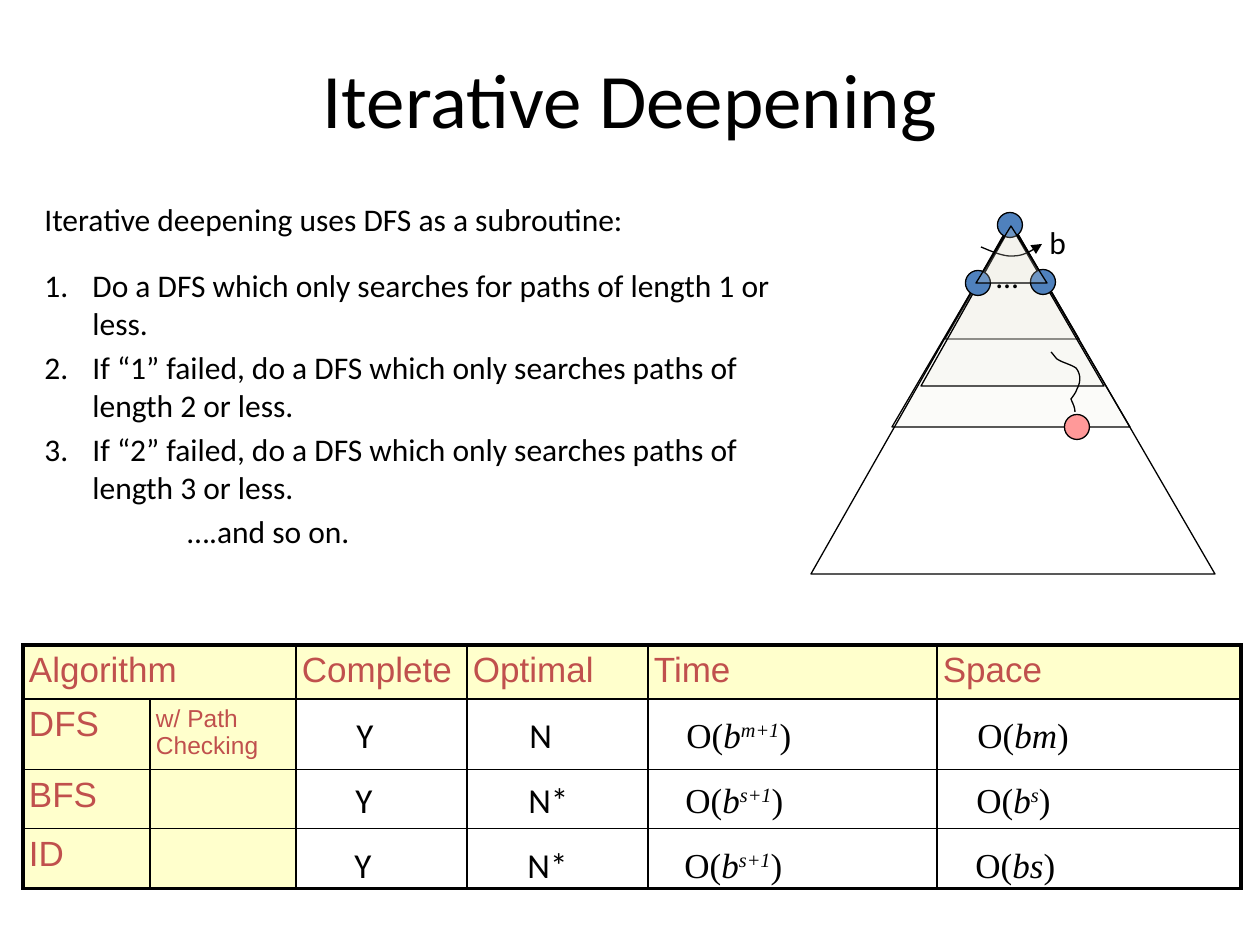
"""Builds the Iterative Deepening slide: steps, search pyramid and comparison table."""
from lxml import etree
from pptx import Presentation
from pptx.dml.color import RGBColor
from pptx.enum.shapes import MSO_SHAPE
from pptx.enum.text import MSO_ANCHOR, PP_ALIGN
from pptx.oxml.ns import qn
from pptx.util import Pt

OVAL = MSO_SHAPE.OVAL
MIDDLE = MSO_ANCHOR.MIDDLE
CENTER = PP_ALIGN.CENTER
EMU_PER_PX = 914400 / 126
COLORS = {"ink": "000000", "label": "C0504D", "label_fill": "FFFFCC",
          "layer": "EEECE1", "node": "4F81BD", "goal": "FF9999"}

TITLE = "Iterative Deepening"
INTRO = "Iterative deepening uses DFS as a subroutine:"
STEPS = ["Do a DFS which only searches for paths of length 1 or less.",
         "If “1” failed, do a DFS which only searches paths of length 2 or less.",
         "If “2” failed, do a DFS which only searches paths of length 3 or less."]
OUTRO = "….and so on."

HEADERS = ["Algorithm", "", "Complete", "Optimal", "Time", "Space"]
ALGORITHMS = [("DFS", "w/ Path Checking"), ("BFS", ""), ("ID", "")]
RESULTS = [("Y", "N", ("b", "m+1"), ("bm", "")),
           ("Y", "N*", ("b", "s+1"), ("b", "s")),
           ("Y", "N*", ("b", "s+1"), ("bs", ""))]
COLUMNS = [127, 146, 171, 181, 289, 304]
ROWS = [51, 68, 59, 60]
RESULT_BOXES = [(344, 84), (517, 84), (674, 262), (965, 189)]
RESULT_TOP, RESULT_PITCH = 707, 65

LAYERS = [[(1012, 224), (945, 339), (1079, 339)],
          [(1011, 224), (892, 427), (1130, 427)],
          [(1011, 226), (921, 386), (1104, 386)]]
FIRST_LAYER = [(1011, 226), (976, 283), (1047, 283)]
WHOLE_TREE = [(811, 574), (1215, 574), (1011, 222)]
NODES = [(1010, 225), (978, 283), (1043, 282)]
GOAL = (1077, 427)
NODE_SIZE = 25
BRANCH_ARC = [(981, 247), (993, 252), (1004, 257), (1014, 256),
              (1024, 256), (1033, 250), (1042, 244)]
PATH_TO_GOAL = [(1051, 352), (1053, 354), (1055, 357), (1057, 359),
                (1063, 363), (1070, 364), (1076, 368),
                (1081, 374), (1081, 382), (1077, 389),
                (1076, 393), (1071, 399), (1071, 399),
                (1073, 404), (1075, 407), (1075, 412)]


def px(n):
    return round(n * EMU_PER_PX)


def rgb(name):
    return RGBColor.from_string(COLORS[name])


def set_font(font, size, face="Calibri", color="ink"):
    font.size, font.name = Pt(size), face
    font.color.rgb = rgb(color)


def style(sp, fill=None, opacity=None):
    sp.shadow.inherit = False
    sp.line.color.rgb = rgb("ink")
    sp.line.width = Pt(0.75)
    if fill is None:
        sp.fill.background()
        return
    sp.fill.solid()
    sp.fill.fore_color.rgb = rgb(fill)
    if opacity:
        color = sp.fill._xPr.find(".//" + qn("a:srgbClr"))
        etree.SubElement(color, qn("a:alpha"), val=str(opacity * 1000))


def outline(s, points, close, fill=None, opacity=None):
    start, *rest = [(px(x), px(y)) for x, y in points]
    builder = s.shapes.build_freeform(*start, scale=1.0)
    builder.add_line_segments(rest, close=close)
    sp = builder.convert_to_shape()
    style(sp, fill, opacity)
    return sp


def bezier(points, steps=10):
    curve = [points[0]]
    for i in range(0, len(points) - 1, 3):
        a, b, c, d = points[i:i + 4]
        for k in range(1, steps + 1):
            t = k / steps
            u = 1 - t
            curve.append(tuple(u**3 * a[j] + 3 * u * u * t * b[j]
                               + 3 * u * t * t * c[j] + t**3 * d[j] for j in (0, 1)))
    return curve


def node(s, center, fill):
    x, y = (v - NODE_SIZE / 2 for v in center)
    style(s.shapes.add_shape(OVAL, px(x), px(y), px(NODE_SIZE), px(NODE_SIZE)), fill)


def text_box(s, x, y, w, h):
    tf = s.shapes.add_textbox(px(x), px(y), px(w), px(h)).text_frame
    tf.word_wrap = True
    return tf


def label(s, text, x, y, w, h, size):
    p = text_box(s, x, y, w, h).paragraphs[0]
    p.text = text
    set_font(p.font, size)


def formula(s, base, exponent, x, y, w, h):
    p = text_box(s, x, y, w, h).paragraphs[0]
    set_font(p.font, 20, "Times New Roman")
    for text, italic, raised in [("O(", False, False), (base, True, False),
                                 (exponent, True, True), (")", False, False)]:
        if text:
            r = p.add_run()
            r.text, r.font.italic = text, italic
            if raised:
                r._r.get_or_add_rPr().set("baseline", "30000")


def add_steps(s):
    tf = text_box(s, 32, 194, 762, 694)
    lines = [(INTRO, 0, 0), *((step, 48, 3.6) for step in STEPS), (OUTRO, 143, 3.6)]
    for i, (text, margin, before) in enumerate(lines):
        p = tf.add_paragraph() if i else tf.paragraphs[0]
        p.text = text
        p.space_before = Pt(16 if i == 1 else before)
        set_font(p.font, 18)
        pPr = p._p.get_or_add_pPr()
        pPr.set("marL", str(px(margin)))
        if text in STEPS:
            pPr.set("indent", str(px(-margin)))
            bullet = etree.Element(qn("a:buAutoNum"), type="arabicPeriod")
            pPr.find(qn("a:defRPr")).addprevious(bullet)


def set_borders(cell, widths):
    tcPr = cell._tc.get_or_add_tcPr()
    for i, (side, width) in enumerate(widths.items()):
        ln = etree.Element(qn("a:" + side), w=str(Pt(width)))
        fill = etree.SubElement(ln, qn("a:solidFill"))
        etree.SubElement(fill, qn("a:srgbClr"), val=COLORS["ink"])
        tcPr.insert(i, ln)


def add_comparison(s):
    last_row, last_col = len(ROWS) - 1, len(COLUMNS) - 1
    table = s.shapes.add_table(len(ROWS), len(COLUMNS), px(23), px(645),
                               px(sum(COLUMNS)), px(sum(ROWS))).table
    for col, width in zip(table.columns, COLUMNS):
        col.width = px(width)
    for row, height in zip(table.rows, ROWS):
        row.height = px(height)
    for i, texts in enumerate([HEADERS, *ALGORITHMS]):
        for j in range(len(COLUMNS)):
            cell = table.cell(i, j)
            cell.margin_left = cell.margin_top = cell.margin_bottom = px(6)
            cell.margin_right = 0
            if i == 0 or j < 2:
                cell.fill.solid()
                cell.fill.fore_color.rgb = rgb("label_fill")
            else:
                cell.fill.background()
            if j < len(texts) and texts[j]:
                p = cell.text_frame.paragraphs[0]
                p.text = texts[j]
                set_font(p.font, 14 if i and j else 20, "Arial", "label")
            edges = {"lnL": j == 0, "lnR": j == last_col, "lnT": i == 0, "lnB": i == last_row}
            set_borders(cell, {side: 2.25 if outer else 1 for side, outer in edges.items()})
    table.cell(0, 0).merge(table.cell(0, 1))
    for i, results in enumerate(RESULTS):
        for value, (x, w) in zip(results, RESULT_BOXES):
            box = (x - i, RESULT_TOP + i * RESULT_PITCH, w, 54)
            if isinstance(value, tuple):
                formula(s, *value, *box)
            else:
                label(s, value, *box, 20)


def add_pyramid(s):
    for layer in LAYERS:
        outline(s, layer, True, "layer", 20)
    outline(s, WHOLE_TREE, True)
    for center in NODES:
        node(s, center, "node")
    label(s, "…", 984, 251, 38, 50, 18)
    arc = outline(s, bezier(BRANCH_ARC), False)
    etree.SubElement(arc.line._get_or_add_ln(), qn("a:tailEnd"), type="triangle")
    label(s, "b", 1037, 217, 42, 50, 18)
    node(s, GOAL, "goal")
    outline(s, bezier(PATH_TO_GOAL), False)
    outline(s, FIRST_LAYER, True, "layer", 20)


def main():
    prs = Presentation()
    prs.slide_width, prs.slide_height = px(1260), px(945)
    s = prs.slides.add_slide(prs.slide_layouts[5])
    title = s.shapes.title
    title.left, title.top, title.width, title.height = px(63), px(35), px(1134), px(126)
    title.text_frame.vertical_anchor = MIDDLE
    p = title.text_frame.paragraphs[0]
    p.text, p.alignment = TITLE, CENTER
    set_font(p.font, 44)
    add_steps(s)
    add_comparison(s)
    add_pyramid(s)
    prs.save("out.pptx")


if __name__ == "__main__":
    main()
